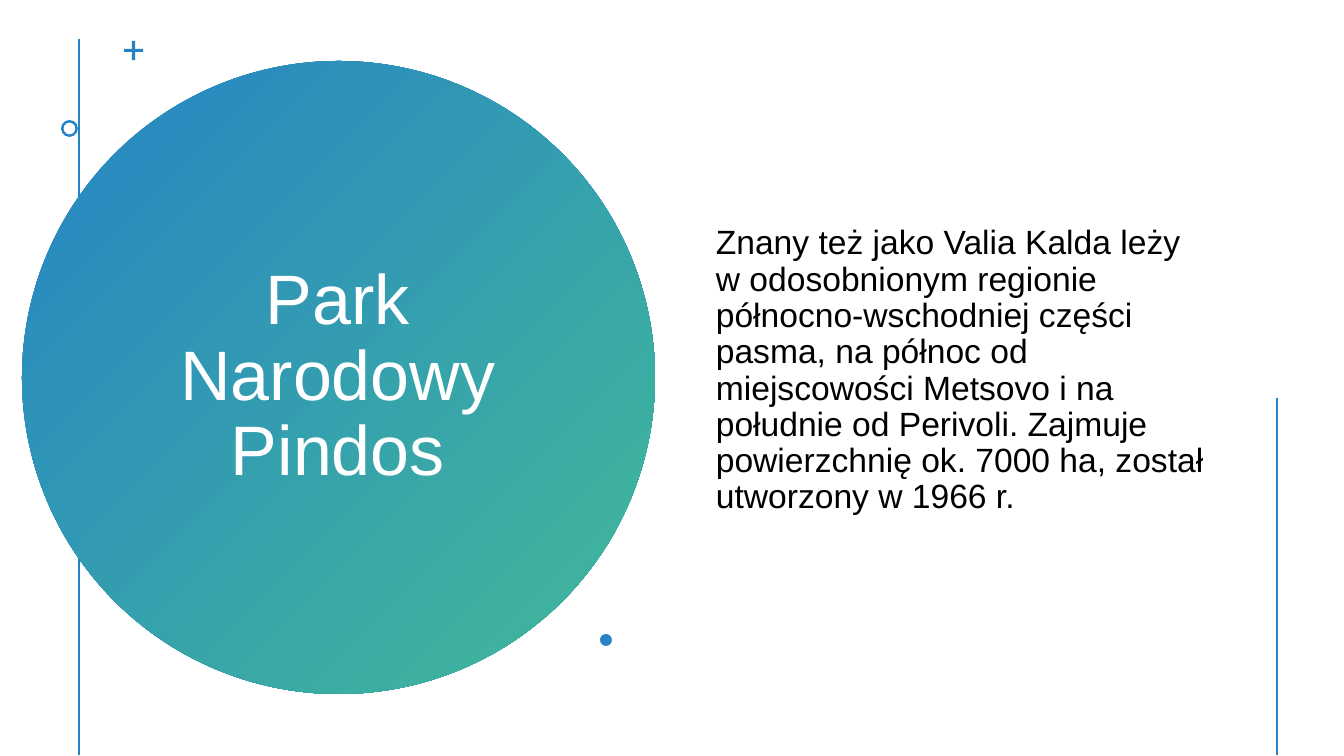
"""Builds the Pindos National Park slide with a gradient circle and a short description."""
import pptx
import pptx.dml.color
import pptx.enum.shapes
import pptx.enum.text
import pptx.oxml.ns
import pptx.util
from lxml import etree

PX = 914400 / 100.8
BLUE = pptx.dml.color.RGBColor(0x26, 0x83, 0xC6)
GREEN = pptx.dml.color.RGBColor(0x42, 0xBA, 0x97)
WHITE = pptx.dml.color.RGBColor(0xFF, 0xFF, 0xFF)
BLACK = pptx.dml.color.RGBColor(0x00, 0x00, 0x00)
MSO = pptx.enum.shapes.MSO_SHAPE
ALIGN = pptx.enum.text.PP_ALIGN


def px(*lengths):
    return [round(n * PX) for n in lengths]


def write(tf, text, size, color, align):
    tf.word_wrap = True
    tf.auto_size = pptx.enum.text.MSO_AUTO_SIZE.NONE
    tf.vertical_anchor = pptx.enum.text.MSO_ANCHOR.MIDDLE
    p = tf.paragraphs[0]
    p.alignment = align
    p.line_spacing = 0.9
    r = p.add_run()
    r.text = text
    r.font.name = "Arial"
    r.font.size = pptx.util.Pt(size)
    r.font.color.rgb = color


prs = pptx.Presentation()
prs.slide_width, prs.slide_height = px(1344, 756)
s = prs.slides.add_slide(prs.slide_layouts[5])

for x, top in [(79, 39), (1277, 398)]:
    line = s.shapes.add_connector(
        pptx.enum.shapes.MSO_CONNECTOR.STRAIGHT, *px(x, top, x, 755))
    line.line.color.rgb = BLUE
    line.line.width = pptx.util.Pt(2)
    etree.SubElement(line._element.spPr, pptx.oxml.ns.qn("a:effectLst"))

ornaments = [
    (MSO.OVAL, 22, 61, 633, None),
    (MSO.CROSS, 124, 41, 19, 0.42),
    (MSO.DONUT, 61, 120, 17, 0.15),
    (MSO.OVAL, 600, 634, 12, None),
]
for kind, left, top, size, adjustment in ornaments:
    sp = s.shapes.add_shape(kind, *px(left, top, size, size))
    sp.shadow.inherit = False
    sp.line.fill.background()
    if adjustment is not None:
        sp.adjustments[0] = adjustment
    if size > 100:
        sp.fill.gradient()
        sp.fill.gradient_angle = 315
        for stop, color in zip(sp.fill.gradient_stops, (BLUE, GREEN)):
            stop.color.rgb = color
    else:
        sp.fill.solid()
        sp.fill.fore_color.rgb = BLUE

title = s.shapes.title
title.left, title.top, title.width, title.height = px(137, 142, 402, 471)
write(title.text_frame, "Park Narodowy Pindos", size=50, color=WHITE, align=ALIGN.CENTER)
s.shapes._spTree.append(title._element)

body = s.shapes.add_textbox(*px(706, 42, 516, 658))
write(
    body.text_frame,
    "Znany też jako Valia Kalda leży w odosobnionym regionie "
    "północno-wschodniej części pasma, na północ od miejscowości Metsovo "
    "i na południe od Perivoli. Zajmuje powierzchnię ok. 7000 ha, "
    "został utworzony w 1966 r.",
    size=24, color=BLACK, align=ALIGN.LEFT)

prs.save("out.pptx")
